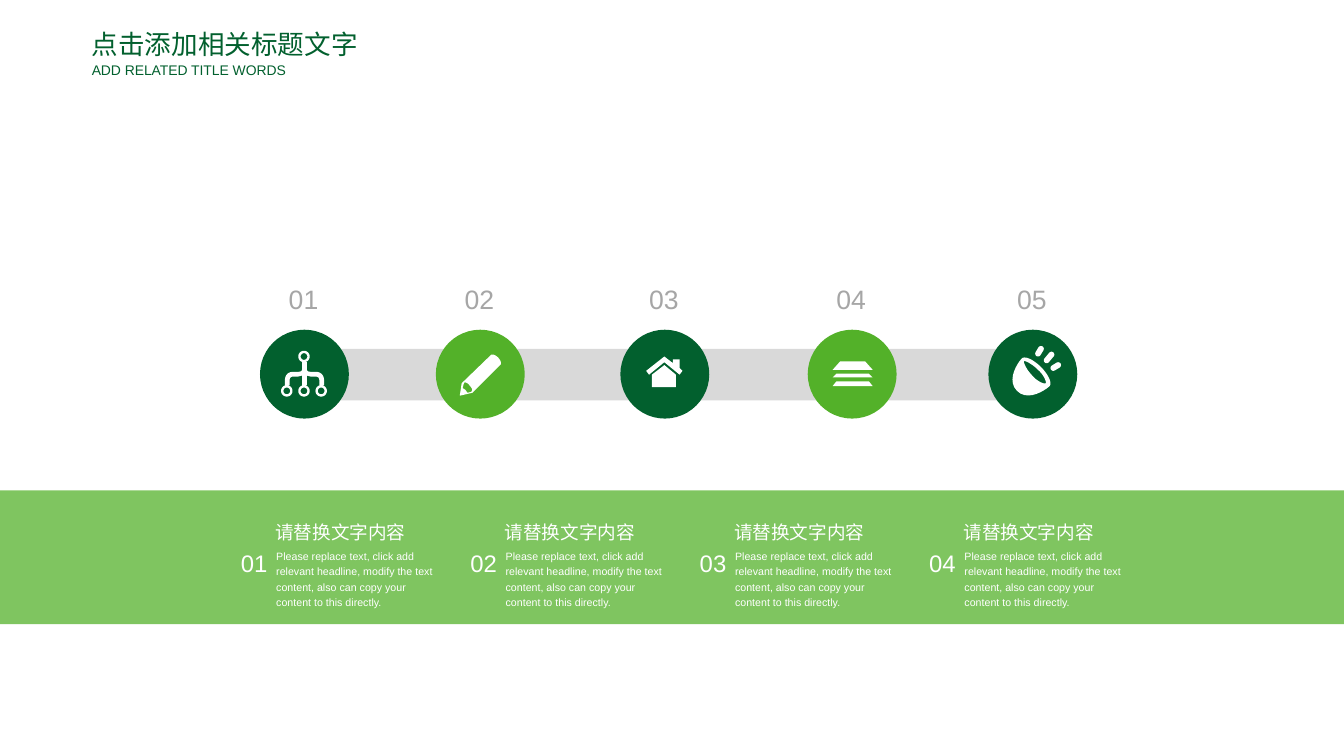
import math
from dataclasses import dataclass

from lxml import etree
from pptx import Presentation
from pptx import util as u
from pptx.dml import color
from pptx.enum import shapes, text
from pptx.oxml import ns
from pptx.shapes import autoshape, shapetree

Point = tuple[float, float]
Contour = list[Point]
Box = tuple[float, float, float, float]

DARK_GREEN = color.RGBColor(0x02, 0x60, 0x2E)
GREEN = color.RGBColor(0x53, 0xB1, 0x29)
LIGHT_GRAY = color.RGBColor(0xD9, 0xD9, 0xD9)
NUMBER_GRAY = color.RGBColor(0xA6, 0xA6, 0xA6)
WHITE = color.RGBColor(0xFF, 0xFF, 0xFF)

FONT = "Arial"
SLIDE_WIDTH, SLIDE_HEIGHT = 14.06, 7.91
CIRCLE_TOP, CIRCLE_SIZE = 3.45, 0.93
BAR_LEFT, BAR_WIDTH, BAR_PITCH = 3.19, 1.86, 1.91
COLUMN_LEFT, COLUMN_PITCH, COLUMN_COUNT = 2.52, 2.4, 4
COLUMN_TITLE = "请替换文字内容"
COLUMN_BODY = (
    "Please replace text, click add relevant headline, modify the text content, "
    "also can copy your content to this directly."
)


@dataclass(frozen=True)
class Step:
    left: float
    fill: color.RGBColor
    icon: list[list[Contour]]


def curve(start: Point, control1: Point, control2: Point, end: Point) -> Contour:
    points = []
    for index in range(11):
        t = index / 10
        weights = ((1 - t) ** 3, 3 * t * (1 - t) ** 2, 3 * t * t * (1 - t), t ** 3)
        anchors = (start, control1, control2, end)
        points.append((
            sum(w * x for w, (x, _) in zip(weights, anchors)),
            sum(w * y for w, (_, y) in zip(weights, anchors)),
        ))
    return points


def capsule(start: Point, end: Point, radius: float) -> Contour:
    heading = math.atan2(end[1] - start[1], end[0] - start[0])
    points = []
    for (x, y), first in ((end, heading - math.pi / 2), (start, heading + math.pi / 2)):
        for index in range(13):
            angle = first + math.pi * index / 12
            points.append((x + radius * math.cos(angle), y + radius * math.sin(angle)))
    return points


def network_icon() -> list[list[Contour]]:
    left_half = [
        (3.16, 3.79),
        *curve((3.16, 3.86), (3.16, 3.87), (3.16, 3.89), (3.12, 3.89)),
        *curve((3.07, 3.89), (3, 3.89), (2.98, 3.94), (2.98, 3.98)),
        (2.98, 4.03), (3.03, 4.03),
        *curve((3.03, 3.98), (3.03, 3.97), (3.03, 3.94), (3.07, 3.94)),
        (3.12, 3.94), (3.16, 3.93), (3.16, 4.03),
    ]
    right_half = [(6.37 - x, y) for x, y in reversed(left_half)]
    nodes = [(3.18, 3.73), (3, 4.09), (3.18, 4.09), (3.36, 4.09)]
    rings = [capsule(node, node, radius) for node in nodes for radius in (0.06, 0.035)]
    return [[left_half + right_half, *rings]]


def pencil_icon() -> list[list[Contour]]:
    outline = [
        *curve((5.21, 3.74), (5.17, 3.7), (5.14, 3.71), (5.14, 3.71)),
        (4.83, 4.01), (4.81, 4.14), (4.94, 4.11),
        *curve((5.24, 3.81), (5.24, 3.81), (5.25, 3.78), (5.21, 3.74)),
    ]
    tip = [
        (4.93, 4.1), (4.89, 4.11), (4.87, 4.08), (4.84, 4.06), (4.85, 4.02),
        *curve((4.86, 4), (4.86, 4), (4.89, 4), (4.91, 4.03)),
        *curve((4.91, 4.03), (4.94, 4.06), (4.94, 4.08), (4.94, 4.08)),
    ]
    return [[outline, tip]]


def house_icon() -> list[list[Contour]]:
    walls = [(6.82, 3.92), (6.82, 4.05), (7.07, 4.05), (7.07, 3.92), (6.95, 3.82)]
    roof = [
        (7.11, 3.85), (7.11, 3.76), (7.04, 3.76), (7.04, 3.8), (6.95, 3.73),
        (6.76, 3.88), (6.79, 3.92), (6.95, 3.79), (7.11, 3.92), (7.14, 3.88),
    ]
    return [[walls], [roof]]


def layers_icon() -> list[list[Contour]]:
    layers = ((3.78, 3.87, 0.08), (3.91, 3.95, 0.04), (3.99, 4.04, 0.04))
    return [
        [[(8.71 + slant, top), (9.13 - slant, top), (9.13, bottom), (8.71, bottom)]]
        for top, bottom, slant in layers
    ]


def bell_icon() -> list[list[Contour]]:
    body = [
        *curve((10.69, 3.75), (10.66, 3.78), (10.52, 3.97), (10.64, 4.09)),
        *curve((10.64, 4.09), (10.76, 4.21), (10.95, 4.07), (10.98, 4.04)),
        *curve((10.98, 4.04), (11.01, 4.01), (10.97, 3.92), (10.89, 3.84)),
        *curve((10.89, 3.84), (10.81, 3.76), (10.72, 3.72), (10.69, 3.75)),
    ]
    opening = [
        *curve((10.94, 4.01), (10.93, 4.02), (10.86, 4), (10.8, 3.93)),
        *curve((10.8, 3.93), (10.73, 3.86), (10.71, 3.79), (10.71, 3.78)),
        *curve((10.71, 3.78), (10.72, 3.77), (10.79, 3.8), (10.86, 3.87)),
        *curve((10.86, 3.87), (10.93, 3.93), (10.95, 4.01), (10.94, 4.01)),
    ]
    rays = [
        capsule((10.86, 3.7), (10.89, 3.65), 0.03),
        capsule((10.95, 3.77), (11, 3.71), 0.03),
        capsule((11.02, 3.85), (11.07, 3.82), 0.03),
    ]
    return [[body, opening, *rays]]


def paint(shape: autoshape.Shape, fill: color.RGBColor) -> autoshape.Shape:
    shape.shadow.inherit = False
    shape.fill.solid()
    shape.fill.fore_color.rgb = fill
    shape.line.fill.background()
    return shape


def add_preset(parent: shapetree.SlideShapes, kind: shapes.MSO_SHAPE, box: Box,
               fill: color.RGBColor) -> autoshape.Shape:
    return paint(parent.add_shape(kind, *map(u.Inches, box)), fill)


def add_outline(parent: shapetree.GroupShapes, contours: list[Contour]) -> None:
    builder = None
    for contour in contours:
        points = [(u.Inches(x), u.Inches(y)) for x, y in contour]
        if builder is None:
            builder = parent.build_freeform(*points[0])
        else:
            builder.move_to(*points[0])
        builder.add_line_segments(points[1:], close=True)
    paint(builder.convert_to_shape(), WHITE)


def write(shape: autoshape.Shape, words: str, *, box: Box, size: float, ink: color.RGBColor,
          wrap: bool = False, spacing: float = 1.2, inset: float = 0,
          align: text.PP_ALIGN = text.PP_ALIGN.LEFT) -> None:
    shape.left, shape.top, shape.width, shape.height = map(u.Inches, box)
    frame = shape.text_frame
    frame.word_wrap = wrap
    frame.auto_size = text.MSO_AUTO_SIZE.SHAPE_TO_FIT_TEXT
    frame.vertical_anchor = text.MSO_ANCHOR.TOP
    frame.margin_left = frame.margin_right = u.Inches(inset)
    frame.margin_top = frame.margin_bottom = u.Inches(inset / 2)
    paragraph = frame.paragraphs[0]
    paragraph.alignment = align
    paragraph.line_spacing = spacing
    run = paragraph.add_run()
    run.text = words
    run.font.name = FONT
    run.font.size = u.Pt(size)
    run.font.color.rgb = ink


def main() -> None:
    presentation = Presentation()
    presentation.slide_width, presentation.slide_height = u.Inches(SLIDE_WIDTH), u.Inches(SLIDE_HEIGHT)
    slide = presentation.slides.add_slide(presentation.slide_layouts[5])
    canvas = slide.shapes

    def add_text(words: str, **style) -> None:
        write(canvas.add_textbox(0, 0, 0, 0), words, **style)

    write(canvas.title, "点击添加相关标题文字", box=(0.96, 0.29, 2.8, 0.34), size=20, ink=DARK_GREEN, spacing=1.0)
    add_text("ADD RELATED TITLE WORDS", box=(0.96, 0.64, 2.08, 0.18), size=10.5, ink=DARK_GREEN, spacing=1.0)

    band = add_preset(canvas, shapes.MSO_SHAPE.RECTANGLE, (0, 5.13, SLIDE_WIDTH, 1.4), GREEN)
    band_color = band.fill._xPr.find(".//" + ns.qn("a:srgbClr"))
    etree.SubElement(band_color, ns.qn("a:alpha"), val="74000")

    steps = [
        Step(2.72, DARK_GREEN, network_icon()),
        Step(4.56, GREEN, pencil_icon()),
        Step(6.49, DARK_GREEN, house_icon()),
        Step(8.45, GREEN, layers_icon()),
        Step(10.34, DARK_GREEN, bell_icon()),
    ]
    for index in range(len(steps) - 1):
        bar = (BAR_LEFT + index * BAR_PITCH, 3.65, BAR_WIDTH, 0.54)
        add_preset(canvas, shapes.MSO_SHAPE.RECTANGLE, bar, LIGHT_GRAY)
    for number, step in enumerate(steps, 1):
        badge = canvas.add_group_shape().shapes
        circle = (step.left, CIRCLE_TOP, CIRCLE_SIZE, CIRCLE_SIZE)
        add_preset(badge, shapes.MSO_SHAPE.OVAL, circle, step.fill)
        for contours in step.icon:
            add_outline(badge, contours)
        add_text(f"{number:02}", box=(step.left + 0.2, 2.84, 0.51, 0.47), size=20, ink=NUMBER_GRAY,
                 inset=0.1, align=text.PP_ALIGN.CENTER)

    for index in range(COLUMN_COUNT):
        left = COLUMN_LEFT + index * COLUMN_PITCH
        add_text(f"{index + 1:02}", box=(left, 5.68, 0.28, 0.33), size=18, ink=WHITE)
        add_text(COLUMN_BODY, box=(left + 0.37, 5.73, 1.64, 0.63), size=8, ink=WHITE, wrap=True)
        add_text(COLUMN_TITLE, box=(left + 0.36, 5.4, 1.37, 0.26), size=14, ink=WHITE)

    presentation.save("out.pptx")


if __name__ == "__main__":
    main()
